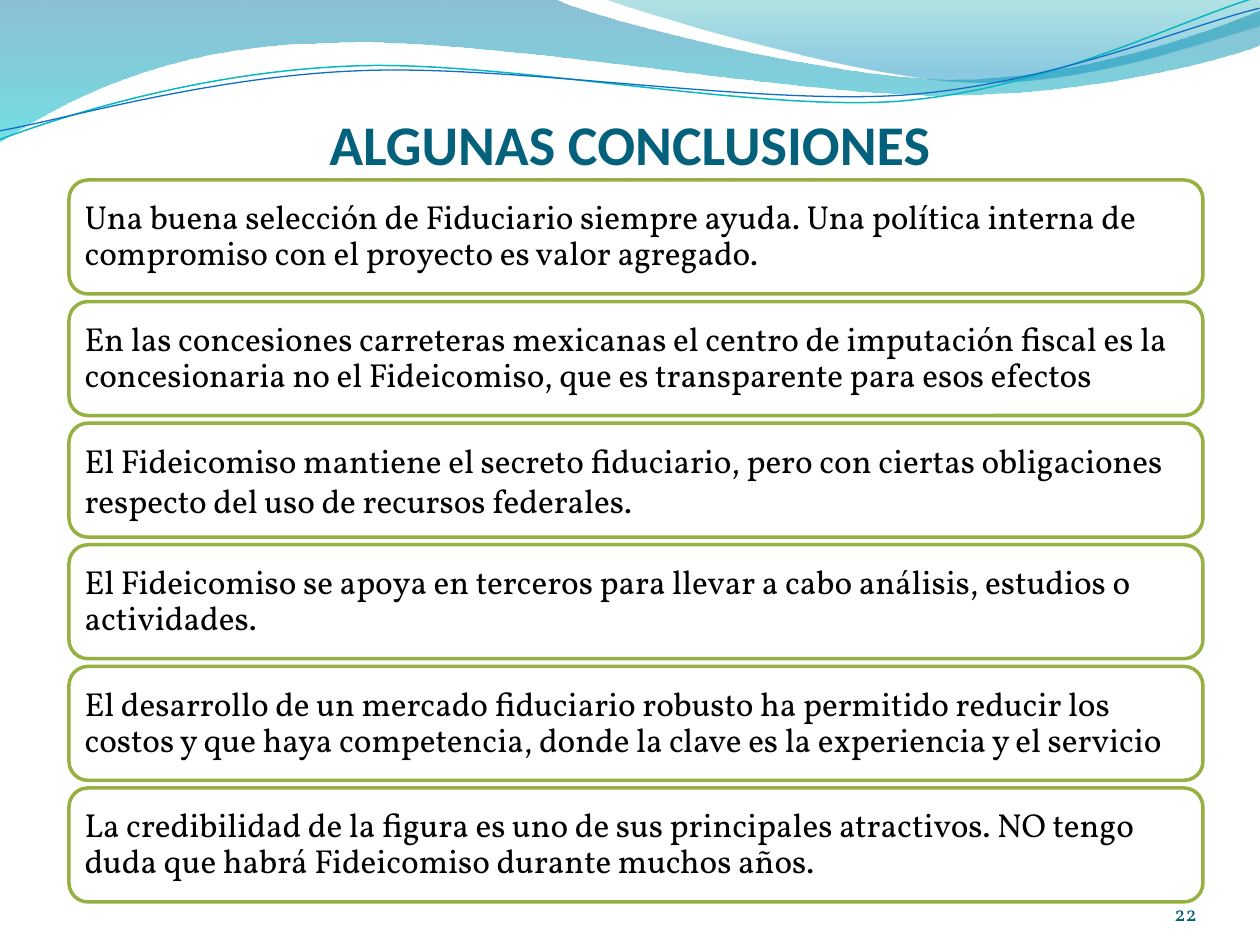
from lxml.etree import SubElement
from pptx import Presentation
from pptx.dml.color import RGBColor
from pptx.enum.shapes import MSO_SHAPE
from pptx.enum.text import MSO_ANCHOR, PP_ALIGN
from pptx.oxml.ns import qn
from pptx.util import Pt

PX = 914400 / 126
COLORS = {
    "title": "04617B", "number": "045D75", "text": "000000",
    "box": "FFFFFF", "border": "96B042",
    "blue": "0074A1", "cyan": "00C6CF", "teal": "00A1A9", "sky": "008BBF",
    "teal line": "0AB8BF", "blue line": "0F6FC6",
}


def color(name):
    return RGBColor.from_string(COLORS[name])


def add_wave(start, pieces, closed):
    """Draw pieces in px: a pair is a line's end, six numbers are a cubic curve."""
    builder = slide.shapes.build_freeform(*start, scale=PX)
    for piece in pieces:
        builder.add_line_segments(list(zip(piece[::2], piece[1::2])), close=False)
    if closed:
        builder.add_line_segments([start], close=True)
    shape = builder.convert_to_shape()
    shape.shadow.inherit = False
    # Join the three points of each curve into one cubic segment
    segments = iter(list(shape._element.iter(qn("a:lnTo"))))
    for piece in pieces:
        segment = next(segments)
        if len(piece) == 6:
            segment.tag = qn("a:cubicBezTo")
            for _ in range(2):
                extra = next(segments)
                segment.append(extra[0])
                extra.getparent().remove(extra)
    return shape


presentation = Presentation()
presentation.slide_width = round(1260 * PX)
presentation.slide_height = round(945 * PX)
slide = presentation.slides.add_slide(presentation.slide_layouts[6])

# Gradient waves: start, pieces, stops as (position, colour, opacity in %)
bands = [
    ((0, 0),
     [(554, -1), (600, 21, 837, 79, 955, 79), (1075, 79, 1207, 33, 1260, 11),
      (1261, 45), (1239, 55, 1096, 96, 940, 95), (784, 95, 481, 35, 324, 43),
      (163, 45, 58, 105, -1, 142)],
     [(0, "blue", 45), (1, "cyan", 55)]),
    ((604, -1),
     [(642, 14, 859, 78, 969, 82), (1079, 87, 1211, 40, 1260, 26), (1260, 0)],
     [(0, "teal", 30), (0.8, "sky", 45)]),
]
for start, pieces, stops in bands:
    band = add_wave(start, pieces, True)
    band.line.fill.background()
    band.fill.gradient()
    band.fill.gradient_angle = 270
    for stop, (position, name, _) in zip(band.fill.gradient_stops, stops):
        stop.position = position
        stop.color.rgb = color(name)
    gradient_colors = band._element.spPr.iter(qn("a:srgbClr"))
    for element, (_, _, opacity) in zip(gradient_colors, stops):
        SubElement(element, qn("a:alpha")).set("val", str(opacity * 1000))

# Thin waves, drawn level and then turned
wave_lines = [
    ((-3, 110), [(59, 90, 199, 52, 350, 53), (499, 53, 745, 117, 896, 114),
                 (1049, 109, 1184, 45, 1260, 27)], "teal line", 0.85),
    ((-2, 101), [(57, 94, 207, 57, 357, 58), (509, 58, 750, 111, 902, 108),
                 (1052, 104, 1188, 52, 1262, 38)], "blue line", 0.75),
]
for start, pieces, name, width in wave_lines:
    wave_line = add_wave(start, pieces, False)
    wave_line.rotation = 357.3
    wave_line.fill.background()
    wave_line.line.color.rgb = color(name)
    wave_line.line.width = Pt(width)

# Title and slide number
labels = [
    ("ALGUNAS CONCLUSIONES", (63, 86, 1134, 91), 6, PP_ALIGN.CENTER, "Calibri", 32, True, "title"),
    ("22", (1092, 876, 105, 50), 0, PP_ALIGN.RIGHT, "Vollkorn", 12, None, "number"),
]
for text, area, top_margin, alignment, font_name, size, bold, name in labels:
    label = slide.shapes.add_textbox(*(round(length * PX) for length in area))
    frame = label.text_frame
    frame.word_wrap = True
    frame.vertical_anchor = MSO_ANCHOR.BOTTOM
    frame.margin_left = frame.margin_right = frame.margin_bottom = 0
    frame.margin_top = round(top_margin * PX)
    paragraph = frame.paragraphs[0]
    paragraph.text = text
    paragraph.alignment = alignment
    paragraph.font.name = font_name
    paragraph.font.size = Pt(size)
    paragraph.font.bold = bold
    paragraph.font.color.rgb = color(name)

# Conclusions: text and line spacing
conclusions = [
    ("Una buena selección de Fiduciario siempre ayuda. Una política interna de "
     "compromiso con el proyecto es valor agregado.", 0.9),
    ("En las concesiones carreteras mexicanas el centro de imputación fiscal es la "
     "concesionaria no el Fideicomiso, que es transparente para esos efectos", 0.9),
    ("El Fideicomiso mantiene el secreto fiduciario, pero con ciertas obligaciones "
     "respecto del uso de recursos federales.", 1.0),
    ("El Fideicomiso se apoya en terceros para llevar a cabo análisis, estudios o "
     "actividades.", 0.9),
    ("El desarrollo de un mercado fiduciario robusto ha permitido reducir los "
     "costos y que haya competencia, donde la clave es la experiencia y el servicio", 0.9),
    ("La credibilidad de la figura es uno de sus principales atractivos. NO tengo "
     "duda que habrá Fideicomiso durante muchos años.", 0.9),
]
FIRST_TOP, LAST_TOP = 180, 788
pitch = (LAST_TOP - FIRST_TOP) / (len(conclusions) - 1)
for index, (text, line_spacing) in enumerate(conclusions):
    box = slide.shapes.add_shape(
        MSO_SHAPE.ROUNDED_RECTANGLE, round(69 * PX), round((FIRST_TOP + index * pitch) * PX),
        round(1134 * PX), round(114 * PX))
    box.shadow.inherit = False
    box.fill.solid()
    box.fill.fore_color.rgb = color("box")
    box.line.color.rgb = color("border")
    box.line.width = Pt(2)
    frame = box.text_frame
    frame.word_wrap = True
    frame.vertical_anchor = MSO_ANCHOR.MIDDLE
    frame.margin_left = frame.margin_right = round(10 * PX)
    frame.margin_top = frame.margin_bottom = round(10 * PX)
    paragraph = frame.paragraphs[0]
    paragraph.text = text
    paragraph.alignment = PP_ALIGN.LEFT
    paragraph.line_spacing = line_spacing
    paragraph.font.name = "Vollkorn"
    paragraph.font.size = Pt(19)
    paragraph.font.color.rgb = color("text")

presentation.save("out.pptx")
